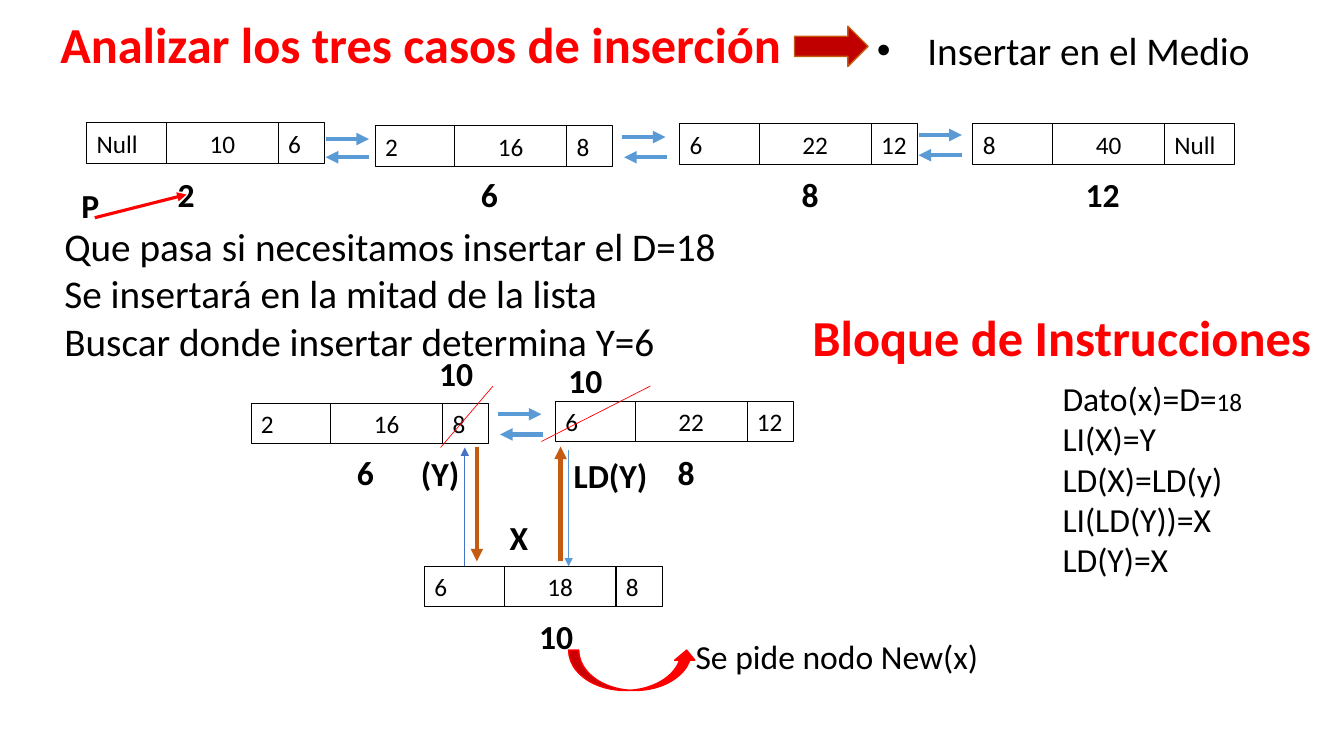
from dataclasses import dataclass

from lxml import etree
from pptx import Presentation
from pptx.dml import color as dml
from pptx.enum import shapes, text
from pptx.oxml import ns
from pptx.shapes import autoshape as auto
from pptx.shapes import connector as conn
from pptx.shapes import shapetree as tree
from pptx.text import text as txt
from pptx import util as u

SCALE = 9144


@dataclass(frozen=True)
class Theme:
    font: str = "Calibri"
    black: str = "000000"
    white: str = "FFFFFF"
    red: str = "FF0000"
    dark: str = "C00000"
    blue: str = "5B9BD5"
    navy: str = "4472C4"
    rust: str = "C55A11"
    title: int = 36
    body: int = 28
    label: int = 24
    cell: int = 18


THEME = Theme()


@dataclass(frozen=True)
class Node:
    x: int
    y: int
    left: str
    data: str
    right: str
    end: int = 46
    fill: str = ""


@dataclass(frozen=True)
class Label:
    x: int
    y: int
    wide: int
    high: int
    lines: tuple[str, ...]
    size: int = THEME.label
    color: str = THEME.black
    bold: bool = False
    center: bool = False
    bullet: bool = False
    small: str = ""


@dataclass(frozen=True)
class Line:
    x1: int
    y1: int
    x2: int
    y2: int
    color: str
    width: float
    arrow: bool = True


@dataclass(frozen=True)
class Pair:
    x: int
    y: int
    shift: int = 0
    gap: int = 20


@dataclass(frozen=True)
class Arrow:
    kind: shapes.MSO_SHAPE
    x: int
    y: int
    wide: int
    high: int
    fill: str
    edge: str


def tag(x: int, y: int, word: str, wide: int = 71) -> Label:
    return Label(x, y, wide, 50, (word,), bold=True, center=True)


NODES = (
    Node(86, 122, "Null", "10", "6"),
    Node(372, 125, "2", "16", "8"),
    Node(674, 123, "6", "22", "12"),
    Node(965, 123, "8", "40", "Null", end=69),
    Node(249, 400, "2", "16", "8", fill=THEME.white),
    Node(551, 398, "6", "22", "12"),
    Node(421, 562, "6", "18", "8"),
)
PAIRS = (
    Pair(323, 138, gap=18),
    Pair(617, 136, shift=2),
    Pair(911, 134),
    Pair(494, 411, shift=2),
)
LABELS = (
    Label(54, 216, 1224, 151, (
        "Que pasa si necesitamos insertar el D=18",
        "Se insertará en la mitad de la lista",
        "Buscar donde insertar determina Y=6"), THEME.body),
    Label(680, 626, 368, 50, ("Se pide nodo New(x)",)),
    Label(1044, 370, 200, 212, (
        "Dato(x)=D=", "LI(X)=Y", "LD(X)=LD(y)", "LI(LD(Y))=X", "LD(Y)=X"),
        small="18"),
    Label(796, 299, 532, 71, ("Bloque de Instrucciones",),
          THEME.title, THEME.red, bold=True),
    Label(50, 8, 746, 71, ("Analizar los tres casos de inserción",),
          THEME.title, THEME.red, bold=True),
    Label(860, 21, 440, 57, ("Insertar en el Medio",), THEME.body, bullet=True),
    tag(149, 168, "2"),
    tag(450, 168, "6"),
    tag(768, 168, "8"),
    tag(1058, 168, "12"),
    tag(54, 179, "P"),
    tag(327, 443, "6"),
    tag(645, 443, "8"),
    tag(516, 606, "10"),
    tag(401, 444, "(Y)"),
    tag(556, 446, "LD(Y)", 99),
    tag(479, 508, "X"),
    tag(545, 352, "10"),
    tag(417, 345, "10"),
)
LINES = (
    Line(94, 216, 185, 193, THEME.red, 2.25),
    Line(473, 443, 473, 557, THEME.rust, 3),
    Line(556, 557, 556, 443, THEME.rust, 3),
    Line(461, 562, 461, 444, THEME.navy, 0.5),
    Line(564, 446, 564, 562, THEME.blue, 0.5),
    Line(537, 438, 645, 383, THEME.red, 0.5, arrow=False),
    Line(437, 444, 489, 383, THEME.red, 0.5, arrow=False),
)
ARROWS = (
    Arrow(shapes.MSO_SHAPE.CURVED_UP_ARROW, 564, 645, 127, 40, THEME.red, THEME.red),
    Arrow(shapes.MSO_SHAPE.RIGHT_ARROW, 788, 26, 73, 40, THEME.dark, THEME.rust),
)


def px(*sizes: int) -> list[u.Emu]:
    return [u.Emu(size * SCALE) for size in sizes]


def rgb(code: str) -> dml.RGBColor:
    return dml.RGBColor.from_string(code)


def style(font: txt.Font, size: int, color: str, bold: bool = False) -> None:
    font.name, font.size, font.bold = THEME.font, u.Pt(size), bold
    font.color.rgb = rgb(color)


def add_form(board: tree.SlideShapes, kind: shapes.MSO_SHAPE, area: list[u.Emu],
             fill: str, edge: str, width: float) -> auto.Shape:
    form = board.add_shape(kind, *area)
    form.shadow.inherit = False
    if fill:
        form.fill.solid()
        form.fill.fore_color.rgb = rgb(fill)
    else:
        form.fill.background()
    form.line.color.rgb, form.line.width = rgb(edge), u.Pt(width)
    return form


def add_node(board: tree.SlideShapes, node: Node) -> None:
    x = node.x
    left, center = text.PP_ALIGN.LEFT, text.PP_ALIGN.CENTER
    for word, wide, align, fill in ((node.left, 79, left, ""),
                                    (node.data, 111, center, ""),
                                    (node.right, node.end, left, node.fill)):
        cell = add_form(board, shapes.MSO_SHAPE.RECTANGLE, px(x, node.y, wide, 40),
                        fill, THEME.black, 0.75)
        cell.text_frame.vertical_anchor = text.MSO_ANCHOR.TOP
        para = cell.text_frame.paragraphs[0]
        para.text, para.alignment = word, align
        style(para.font, THEME.cell, THEME.black)
        x += wide


def add_label(board: tree.SlideShapes, label: Label) -> None:
    box = board.add_textbox(*px(label.x, label.y, label.wide, label.high))
    frame = box.text_frame
    frame.word_wrap, frame.text = True, "\n".join(label.lines)
    if label.bullet:
        props = box.element.txBody.p_lst[0].get_or_add_pPr()
        props.set("marL", str(50 * SCALE))
        props.set("indent", str(-50 * SCALE))
        etree.SubElement(props, ns.qn("a:buFont"), typeface="Arial")
        etree.SubElement(props, ns.qn("a:buChar"), char="•")
    for para in frame.paragraphs:
        para.alignment = text.PP_ALIGN.CENTER if label.center else text.PP_ALIGN.LEFT
        style(para.font, label.size, label.color, label.bold)
    if label.small:
        run = frame.paragraphs[0].add_run()
        run.text, run.font.size = label.small, u.Pt(THEME.cell)


def add_line(board: tree.SlideShapes, line: Line) -> conn.Connector:
    link = board.add_connector(shapes.MSO_CONNECTOR.STRAIGHT,
                               *px(line.x1, line.y1, line.x2, line.y2))
    link.line.color.rgb, link.line.width = rgb(line.color), u.Pt(line.width)
    props = link.element.spPr
    if line.arrow:
        etree.SubElement(props.find(ns.qn("a:ln")), ns.qn("a:tailEnd"), type="triangle")
    etree.SubElement(props, ns.qn("a:effectLst"))
    return link


def add_pair(board: tree.SlideShapes, pair: Pair) -> None:
    near, low = pair.x + pair.shift, pair.y + pair.gap
    add_line(board, Line(pair.x, pair.y, pair.x + 43, pair.y, THEME.blue, 3))
    add_line(board, Line(near + 43, low, near, low, THEME.blue, 3))


def main() -> None:
    deck = Presentation()
    deck.slide_width, deck.slide_height = px(1333, 750)
    board = deck.slides.add_slide(deck.slide_layouts[6]).shapes
    for node in NODES:
        add_node(board, node)
    for pair in PAIRS:
        add_pair(board, pair)
    for label in LABELS:
        add_label(board, label)
    for arrow in ARROWS:
        add_form(board, arrow.kind, px(arrow.x, arrow.y, arrow.wide, arrow.high),
                 arrow.fill, arrow.edge, 1)
    for line in LINES:
        add_line(board, line)
    deck.save("out.pptx")


if __name__ == "__main__":
    main()
